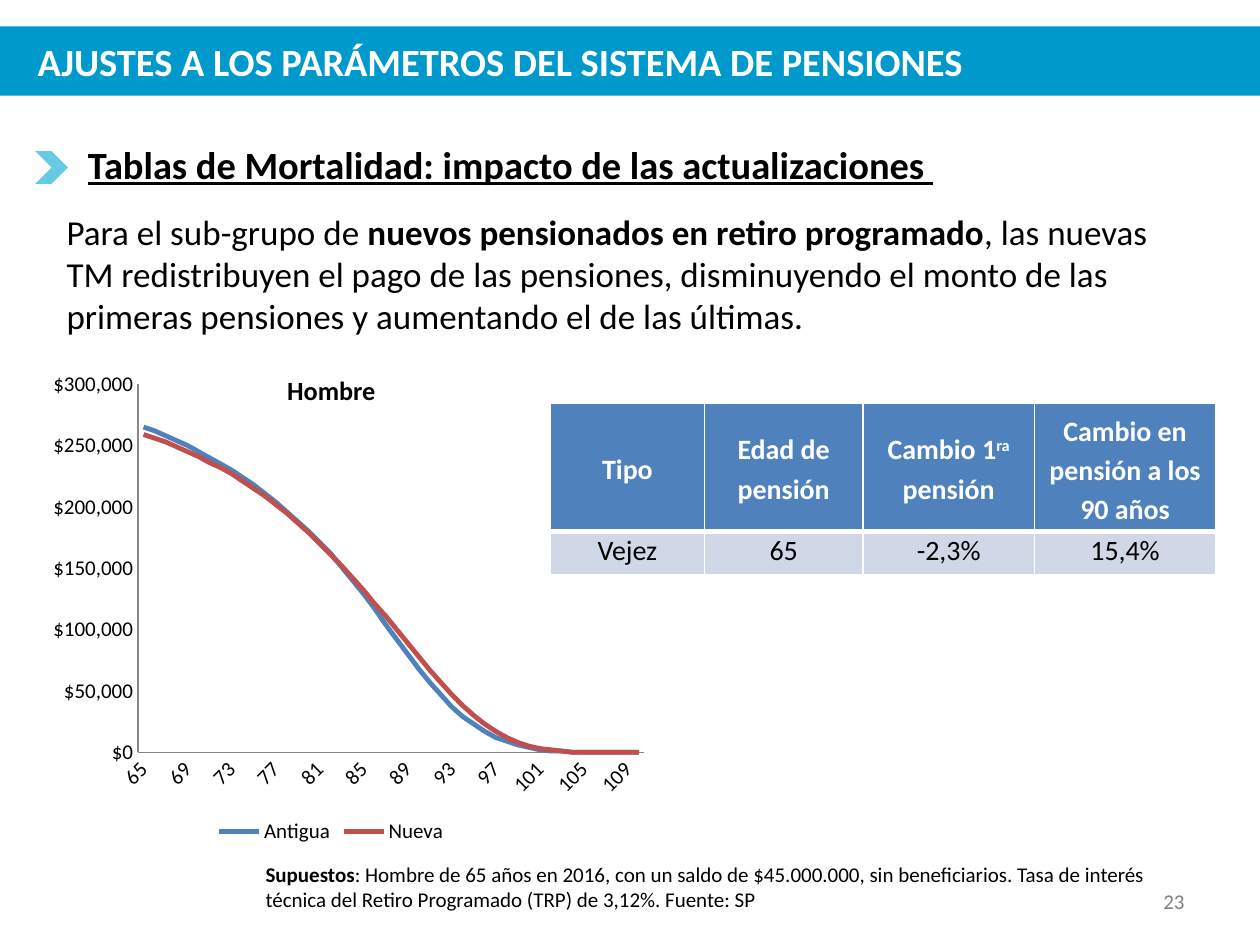
from lxml import etree
from pptx import Presentation
from pptx.chart.data import CategoryChartData
from pptx.dml.color import RGBColor
from pptx.enum.chart import XL_CHART_TYPE, XL_LEGEND_POSITION, XL_TICK_MARK
from pptx.enum.shapes import MSO_SHAPE
from pptx.enum.text import MSO_ANCHOR, PP_ALIGN
from pptx.oxml import parse_xml
from pptx.oxml.ns import nsdecls, qn
from pptx.util import Inches, Pt

LEFT, CENTER, RIGHT, JUSTIFY = PP_ALIGN.LEFT, PP_ALIGN.CENTER, PP_ALIGN.RIGHT, PP_ALIGN.JUSTIFY
TOP, MIDDLE, BOTTOM = MSO_ANCHOR.TOP, MSO_ANCHOR.MIDDLE, MSO_ANCHOR.BOTTOM
NO_TICKS = XL_TICK_MARK.NONE

THEME = {
    "font": "Calibri", "text": "000000", "white": "FFFFFF", "band": "0099CC",
    "chevron": "00A6D6", "muted": "808080", "axis": "868686",
    "header": "4F81BD", "row": "D0D8E8", "old": "4F81BD", "new": "C0504D",
    "heading": 22, "body": 20, "table": 16, "caption": 15, "small": 12,
}
WIDTH, HEIGHT = 10, 7.5
BAND_TOP, BAND_HEIGHT = 0.21, 0.55

# Content: runs are (text, style), where style holds any of b, u, s (bold, underline, superscript)
TITLE = [("AJUSTES A LOS PARÁMETROS DEL SISTEMA DE PENSIONES", "b")]
HEADING = [("Tablas de Mortalidad: impacto de las actualizaciones ", "bu")]
BODY = [
    ("Para el sub-grupo de ", ""),
    ("nuevos pensionados en retiro programado", "b"),
    (", las nuevas TM redistribuyen el pago de las pensiones, disminuyendo el monto "
     "de las primeras pensiones y aumentando el de las últimas.", ""),
]
CAPTION = [("Hombre", "b")]
ASSUMPTIONS = [
    ("Supuestos", "b"),
    (": Hombre de 65 años en 2016, con un saldo de $45.000.000, sin beneficiarios. Tasa de "
     "interés técnica del Retiro Programado (TRP) de 3,12%. Fuente: SP", ""),
]
PAGE = [("23", "")]
TABLE = [
    [[("Tipo", "b")], [("Edad de pensión", "b")],
     [("Cambio 1", "b"), ("ra", "bs"), (" pensión", "b")],
     [("Cambio en pensión a los 90 años", "b")]],
    [[(value, "")] for value in ("Vejez", "65", "-2,3%", "15,4%")],
]
COLUMN_WIDTHS, ROW_HEIGHTS = (1.22, 1.26, 1.36, 1.44), (1.01, 0.34)

# Monthly pension by age, in thousands of pesos
AGES = range(65, 111)
PENSIONS = {
    "Antigua": ("old", [
        265, 262, 258, 254, 250, 245, 240, 235, 230, 224, 218, 211, 204, 196, 188, 180,
        171, 162, 151, 140, 129, 117, 104, 92, 80, 68, 57, 47, 37, 29, 23, 17, 12, 9, 6,
        4, 2, 1, 1, 0, 0, 0, 0, 0, 0, 0]),
    "Nueva": ("new", [
        259, 256, 253, 249, 245, 241, 236, 232, 227, 221, 215, 209, 202, 195, 187, 179,
        170, 161, 152, 142, 132, 121, 111, 100, 89, 78, 67, 57, 47, 38, 30, 23, 17, 12, 8,
        5, 3, 2, 1, 0, 0, 0, 0, 0, 0, 0]),
}
PLOT_AREA = {"x": 0.205, "y": 0.044, "w": 0.773, "h": 0.757}


def color(key):
    return RGBColor.from_string(THEME[key])


def box(*lengths):
    return [Inches(length) for length in lengths]


def write(paragraph, runs, size, ink="text", align=LEFT):
    paragraph.alignment = align
    for text, style in runs:
        run = paragraph.add_run()
        run.text = text
        font = run.font
        font.name, font.size = THEME["font"], Pt(THEME[size])
        font.color.rgb = color(ink)
        font.bold, font.underline = "b" in style, "u" in style
        if "s" in style:
            run._r.get_or_add_rPr().set("baseline", "30000")


def add_text(slide, place, runs, size, ink="text", align=LEFT, anchor=TOP):
    frame = slide.shapes.add_textbox(*box(*place)).text_frame
    frame.word_wrap, frame.vertical_anchor = True, anchor
    write(frame.paragraphs[0], runs, size, ink, align)


def add_solid(slide, kind, place, fill):
    shape = slide.shapes.add_shape(kind, *box(*place))
    shape.shadow.inherit = False
    shape.fill.solid()
    shape.fill.fore_color.rgb = color(fill)
    shape.line.fill.background()
    return shape


def set_borders(cell, bottom):
    properties = cell._tc.get_or_add_tcPr()
    for index, (side, width) in enumerate((("L", 1), ("R", 1), ("T", 1), ("B", bottom))):
        properties.insert(index, parse_xml(
            f'<a:ln{side} {nsdecls("a")} w="{Pt(width)}"><a:solidFill>'
            f'<a:srgbClr val="{THEME["white"]}"/></a:solidFill></a:ln{side}>'))


def add_pension_table(slide):
    place = box(4.37, 3.2, sum(COLUMN_WIDTHS), sum(ROW_HEIGHTS))
    table = slide.shapes.add_table(len(TABLE), len(COLUMN_WIDTHS), *place).table
    for column, width in zip(table.columns, COLUMN_WIDTHS):
        column.width = Inches(width)
    looks = (("header", "white", MIDDLE, 1.15, 3), ("row", "text", BOTTOM, Pt(16.9), 1))
    for r, (fill, ink, anchor, spacing, bottom) in enumerate(looks):
        table.rows[r].height = Inches(ROW_HEIGHTS[r])
        for c, runs in enumerate(TABLE[r]):
            cell = table.cell(r, c)
            cell.vertical_anchor = anchor
            cell.fill.solid()
            cell.fill.fore_color.rgb = color(fill)
            set_borders(cell, bottom)
            paragraph = cell.text_frame.paragraphs[0]
            paragraph.line_spacing = spacing
            write(paragraph, runs, "table", ink, CENTER)


def add_pension_chart(slide):
    data = CategoryChartData()
    data.categories = [str(age) for age in AGES]
    for name, (_, thousands) in PENSIONS.items():
        data.add_series(name, [value * 1000 for value in thousands])
    chart = slide.shapes.add_chart(
        XL_CHART_TYPE.LINE, *box(0.03, 2.88, 5.2, 3.86), data).chart
    chart.has_title = False
    chart.font.name, chart.font.size = THEME["font"], Pt(THEME["small"])
    chart.font.color.rgb = color("text")
    chart.has_legend = True
    chart.legend.position = XL_LEGEND_POSITION.BOTTOM
    chart.legend.include_in_layout = False

    # Lines
    plot = chart.plots[0]
    plot.vary_by_categories = False
    for series in plot.series:
        series.smooth = False
        series.format.line.width = Pt(2.75)
        series.format.line.color.rgb = color(PENSIONS[series.name][0])

    # Axes: every fourth age, slanted
    ages, amounts = chart.category_axis, chart.value_axis
    for axis in (ages, amounts):
        axis.has_major_gridlines = False
        axis.major_tick_mark = axis.minor_tick_mark = NO_TICKS
        axis.format.line.color.rgb = color("axis")
        axis.tick_labels.font.size = Pt(THEME["small"])
    amounts.minimum_scale, amounts.maximum_scale, amounts.major_unit = 0, 300000, 50000
    amounts.tick_labels.number_format = '"$"#,##0'
    amounts.tick_labels.number_format_is_linked = False
    age_axis = ages._element
    age_axis.find(qn("c:txPr")).find(qn("a:bodyPr")).set("rot", "-2700000")
    age_axis.find(qn("c:noMultiLvlLbl")).addprevious(
        parse_xml(f'<c:tickLblSkip {nsdecls("c")} val="4"/>'))

    # Fixed inner plot area
    plot_area = chart._chartSpace.chart.plotArea
    for old_layout in plot_area.findall(qn("c:layout")):
        plot_area.remove(old_layout)
    layout = etree.Element(qn("c:layout"))
    manual = etree.SubElement(layout, qn("c:manualLayout"))
    settings = {"layoutTarget": "inner", "xMode": "edge", "yMode": "edge", **PLOT_AREA}
    for tag, value in settings.items():
        etree.SubElement(manual, qn(f"c:{tag}")).set("val", str(value))
    plot_area.insert(0, layout)


def main():
    deck = Presentation()
    deck.slide_width, deck.slide_height = box(WIDTH, HEIGHT)
    slide = deck.slides.add_slide(deck.slide_layouts[6])

    # Title band and page number
    add_solid(slide, MSO_SHAPE.RECTANGLE, (0, BAND_TOP, WIDTH, BAND_HEIGHT), "band")
    add_text(slide, (7.17, 6.95, 2.33, 0.4), PAGE, "small", "muted", RIGHT, MIDDLE)
    add_text(slide, (0.2, BAND_TOP, 9, BAND_HEIGHT), TITLE, "heading", "white", anchor=MIDDLE)

    # Heading with translucent marker, then the message
    marker = add_solid(slide, MSO_SHAPE.CHEVRON, (0.28, 1.2, 0.26, 0.26), "chevron")
    tint = marker.fill._xPr.find(qn("a:solidFill"))[0]
    etree.SubElement(tint, qn("a:alpha")).set("val", "60000")
    add_text(slide, (0.6, 1.07, 8.73, 0.47), HEADING, "heading", align=JUSTIFY)
    add_text(slide, (0.43, 1.62, 9.13, 1.11), BODY, "body")

    # Evidence and its assumptions
    add_pension_table(slide)
    add_pension_chart(slide)
    add_text(slide, (0.43, 2.92, 4.4, 0.35), CAPTION, "caption", align=CENTER)
    add_text(slide, (2.01, 6.79, 7.64, 0.5), ASSUMPTIONS, "small")
    deck.save("out.pptx")


if __name__ == "__main__":
    main()
